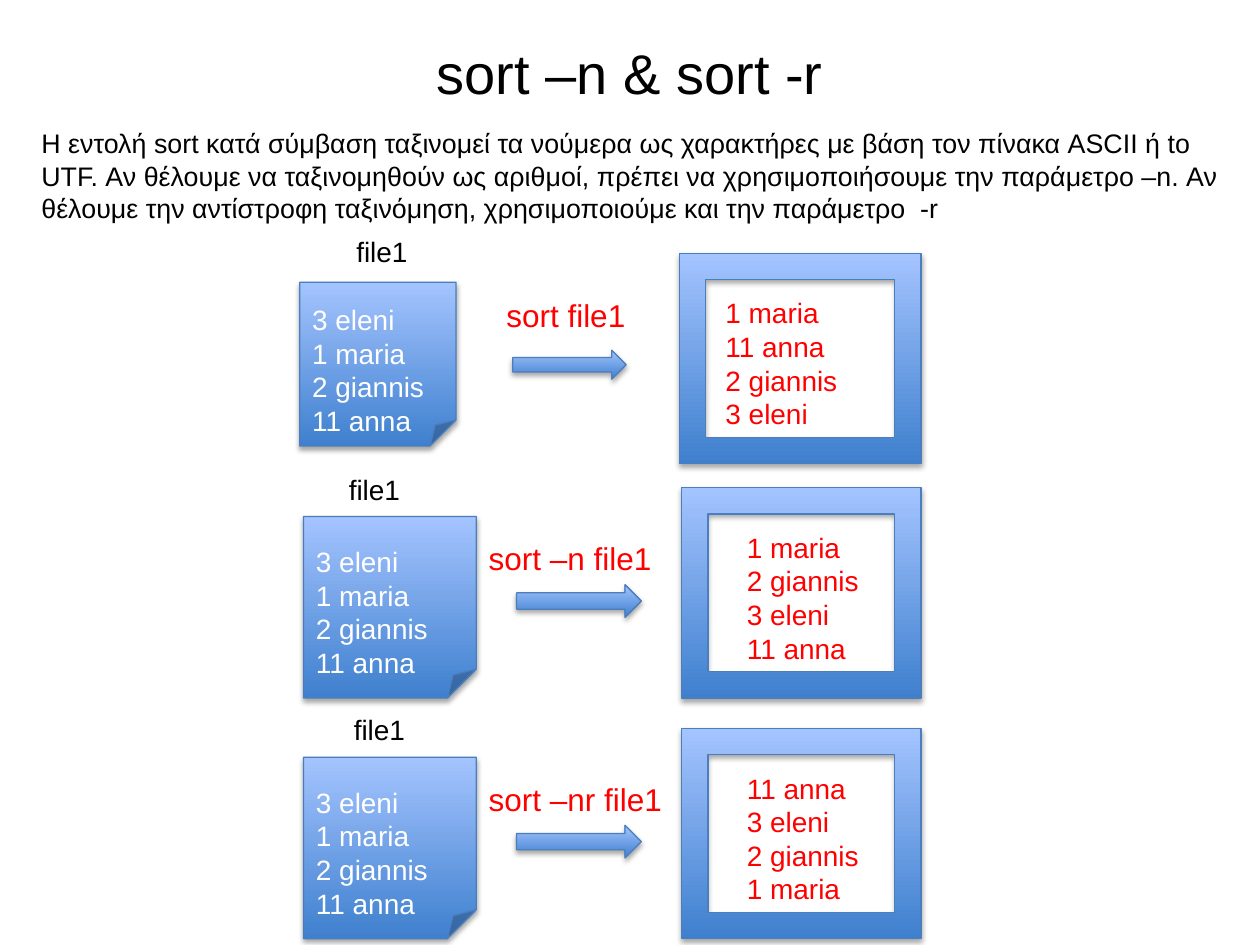
from dataclasses import dataclass

from lxml import etree
from pptx import Presentation
from pptx.dml.color import RGBColor
from pptx.enum.shapes import MSO_SHAPE
from pptx.enum.text import MSO_ANCHOR, PP_ALIGN
from pptx.oxml.ns import qn
from pptx.util import Inches, Pt

FONT = "Arial"
COLORS = {
    "text": "000000",
    "output": "FF0000",
    "note": "FFFFFF",
    "gradient_bottom": "3F80CE",
    "gradient_top": "A4C4FF",
    "outline": "4B7EBC",
    "shadow": "000000",
}
FILE_LINES = ["3 eleni", "1 maria", "2 giannis", "11 anna"]


@dataclass
class RowLayout:
    """Boxes (left, top, width, height) measured from the row's corner."""
    note: tuple
    command: tuple
    arrow: tuple
    frame: tuple
    result: tuple


FIRST_LAYOUT = RowLayout(
    note=(0, 0.43, 1.24, 1.3),
    command=(1.54, 0.49, 1.18, 0.4),
    arrow=(1.69, 0.97, 0.9, 0.23),
    frame=(3.01, 0.2, 1.92, 1.67),
    result=(3.28, 0.49, 1.4, 1.18),
)
WIDE_LAYOUT = RowLayout(
    note=(0, 0.4, 1.37, 1.44),
    command=(1.37, 0.53, 1.63, 0.4),
    arrow=(1.69, 0.94, 0.99, 0.26),
    frame=(3, 0.17, 1.9, 1.67),
    result=(3.42, 0.46, 1.1, 1.18),
)


def color(name):
    return RGBColor.from_string(COLORS[name])


def place(origin, box):
    left, top, width, height = box
    return [Inches(value) for value in
            (origin[0] + left, origin[1] + top, width, height)]


def write_lines(text_frame, lines, size, color_name, align=PP_ALIGN.LEFT):
    text_frame.word_wrap = True
    for index, line in enumerate(lines):
        paragraph = text_frame.paragraphs[0] if index == 0 else text_frame.add_paragraph()
        paragraph.alignment = align
        run = paragraph.add_run()
        run.text = line
        run.font.name = FONT
        run.font.size = Pt(size)
        run.font.color.rgb = color(color_name)


def add_text(slide, origin, box, lines, size, color_name):
    text_box = slide.shapes.add_textbox(*place(origin, box))
    write_lines(text_box.text_frame, lines, size, color_name)
    text_box.text_frame.margin_right = 0
    return text_box


def add_glossy_shape(slide, kind, origin, box):
    shape = slide.shapes.add_shape(kind, *place(origin, box))
    shape.fill.gradient()
    shape.fill.gradient_angle = 90
    for stop, name in zip(shape.fill.gradient_stops, ("gradient_bottom", "gradient_top")):
        stop.color.rgb = color(name)
    for stop, position in zip(shape.fill.gradient_stops, (0, 1)):
        stop.position = position
    shape.line.color.rgb = color("outline")
    shape.line.width = Pt(0.75)

    # Soft shadow straight below
    shape.shadow.inherit = False
    effects = shape._element.spPr.find(qn("a:effectLst"))
    shadow = etree.SubElement(effects, qn("a:outerShdw"), blurRad=str(Pt(3.1)),
                              dist=str(Pt(1.8)), dir="5400000", rotWithShape="0")
    shadow_color = etree.SubElement(shadow, qn("a:srgbClr"), val=COLORS["shadow"])
    etree.SubElement(shadow_color, qn("a:alpha"), val="35000")
    return shape


def add_heading(slide, box):
    title = slide.shapes.title
    title.left, title.top, title.width, title.height = place((0, 0), box)
    title.text_frame.vertical_anchor = MSO_ANCHOR.MIDDLE
    write_lines(title.text_frame, ["sort –n & sort -r"], 32, "text", PP_ALIGN.CENTER)


def add_explanation(slide, box):
    add_text(slide, (0, 0), box, [
        "Η εντολή sort κατά σύμβαση ταξινομεί τα νούμερα ως χαρακτήρες με βάση "
        "τον πίνακα ASCII ή to UTF. Αν θέλουμε να ταξινομηθούν ως αριθμοί, πρέπει "
        "να χρησιμοποιήσουμε την παράμετρο –n. Αν θέλουμε την αντίστροφη "
        "ταξινόμηση, χρησιμοποιούμε και την παράμετρο  -r"
    ], 15.3, "text").text_frame.margin_right = Inches(0.1)


def add_sort_row(slide, origin, layout, label_left, command, result_lines):
    # Input file
    note = add_glossy_shape(slide, MSO_SHAPE.FOLDED_CORNER, origin, layout.note)
    note.text_frame.vertical_anchor = MSO_ANCHOR.MIDDLE
    note.text_frame.margin_top = Inches(0.35)
    write_lines(note.text_frame, FILE_LINES, 16, "note")
    add_text(slide, origin, (label_left, 0, 0.7, 0.37), ["file1"], 16, "text")

    # Command
    add_glossy_shape(slide, MSO_SHAPE.RIGHT_ARROW, origin, layout.arrow)
    add_text(slide, origin, layout.command, [command], 18, "output")

    # Sorted output
    add_glossy_shape(slide, MSO_SHAPE.FRAME, origin, layout.frame)
    add_text(slide, origin, layout.result, result_lines, 16, "output")


def main():
    presentation = Presentation()
    presentation.slide_width = Inches(10)
    presentation.slide_height = Inches(7.5)
    slide = presentation.slides.add_slide(presentation.slide_layouts[5])

    add_heading(slide, (0.5, 0.3, 9, 0.54))
    add_explanation(slide, (0.23, 0.96, 9.59, 0.97))

    numeric = ["1 maria", "2 giannis", "3 eleni", "11 anna"]
    add_sort_row(slide, (2.38, 1.81), FIRST_LAYOUT, 0.35, "sort file1",
                 ["1 maria", "11 anna", "2 giannis", "3 eleni"])
    add_sort_row(slide, (2.41, 3.7), WIDE_LAYOUT, 0.26, "sort –n file1", numeric)
    add_sort_row(slide, (2.41, 5.61), WIDE_LAYOUT, 0.3, "sort –nr file1", numeric[::-1])

    presentation.save("out.pptx")


if __name__ == "__main__":
    main()
